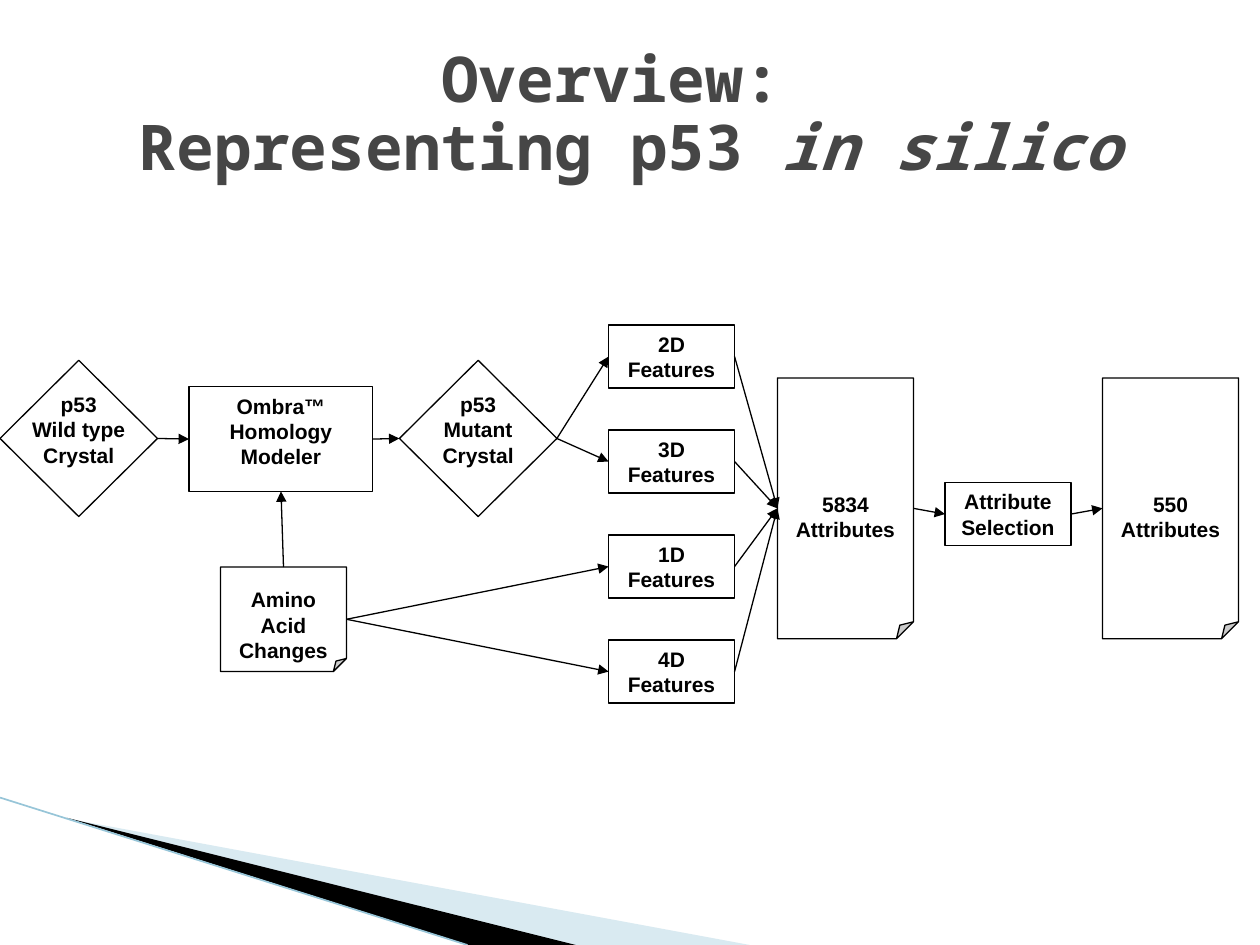
"""Build the slide on representing p53 in silico as a flow diagram."""
from lxml.etree import SubElement
from pptx import Presentation
from pptx.dml.color import RGBColor
from pptx.enum.shapes import MSO_CONNECTOR, MSO_SHAPE
from pptx.enum.text import MSO_ANCHOR, PP_ALIGN
from pptx.oxml.ns import qn
from pptx.util import Inches, Pt

BLACK = RGBColor(0x00, 0x00, 0x00)
WHITE = RGBColor(0xFF, 0xFF, 0xFF)
TITLE_GRAY = RGBColor(0x46, 0x46, 0x46)
PALE_BLUE = RGBColor(0xA0, 0xCB, 0xDC)
EDGE_BLUE = RGBColor(0x97, 0xC5, 0xD8)
TOP, LEFT, BOTTOM, RIGHT = range(4)


def add_text(paragraph, text, *, font="Arial", size=12, color=BLACK, italic=None):
    run = paragraph.add_run()
    run.text = text
    run.font.name = font
    run.font.size = Pt(size)
    run.font.bold = True
    run.font.italic = italic
    run.font.color.rgb = color


def add_line(start, end, color, width):
    line = slide.shapes.add_connector(
        MSO_CONNECTOR.STRAIGHT, *[Inches(value) for value in (*start, *end)]
    )
    line.line.color.rgb = color
    line.line.width = Pt(width)
    SubElement(line._element.spPr, qn("a:effectLst"))
    return line


presentation = Presentation()
presentation.slide_width = Inches(10)
presentation.slide_height = Inches(7.5)
slide = presentation.slides.add_slide(presentation.slide_layouts[5])

title = slide.shapes.title
title.left, title.top = Inches(0.5), Inches(0.3)
title.width, title.height = Inches(9), Inches(1.25)
title.text_frame.vertical_anchor = MSO_ANCHOR.MIDDLE
paragraph = title.text_frame.paragraphs[0]
paragraph.alignment = PP_ALIGN.CENTER
paragraph.line_spacing = 0.9
title_format = {"font": "Noto Sans Mono", "size": 36, "color": TITLE_GRAY}
add_text(paragraph, "Overview: ", **title_format)
paragraph.add_line_break()
add_text(paragraph, "Representing p53 ", **title_format)
add_text(paragraph, "in silico", italic=True, **title_format)

wedges = [
    (PALE_BLUE, 40, [(0.55, 6.5), (5.95, 7.5), (4.56, 7.5)]),
    (BLACK, 100, [(0.53, 6.49), (4.57, 7.5), (3.72, 7.5)]),
]
for color, opacity, corners in wedges:
    points = [(Inches(x), Inches(y)) for x, y in corners]
    builder = slide.shapes.build_freeform(*points[0])
    builder.add_line_segments(points[1:], close=True)
    wedge = builder.convert_to_shape()
    wedge.shadow.inherit = False
    wedge.fill.solid()
    wedge.fill.fore_color.rgb = color
    wedge.line.fill.background()
    if opacity < 100:
        color_element = wedge._element.spPr.find(".//" + qn("a:srgbClr"))
        SubElement(color_element, qn("a:alpha"), val=str(opacity * 1000))
add_line((0, 6.33), (3.71, 7.5), EDGE_BLUE, 0.95)

DIAMOND, BOX, PAGE = MSO_SHAPE.DIAMOND, MSO_SHAPE.RECTANGLE, MSO_SHAPE.FOLDED_CORNER
steps = {
    "wild type": (DIAMOND, "p53\vWild type\vCrystal", 0, 2.86, 1.25, 1.24, 0, 0.14),
    "mutant": (DIAMOND, "p53\vMutant\vCrystal", 3.17, 2.86, 1.25, 1.24, 0, 0.14),
    "modeler": (BOX, "Ombra™ Homology Modeler", 1.5, 3.07, 1.46, 0.83, 0, 0.13),
    "changes": (PAGE, "Amino Acid Changes", 1.75, 4.5, 1, 0.83, 0.19, 0),
    "all": (PAGE, "5834\vAttributes", 6.17, 3, 1.08, 2.07, 0.26, 0),
    "selection": (BOX, "Attribute Selection", 7.5, 3.83, 1, 0.5, 0.05, 0.05),
    "selected": (PAGE, "550\vAttributes", 8.75, 3, 1.08, 2.07, 0.26, 0),
}
features = ["2D", "3D", "1D", "4D"]
for row, name in enumerate(features):
    top = 2.58 + row * 2.5 / 3
    steps[name] = (BOX, f"{name} Features", 4.83, top, 1, 0.5, 0.05, 0.05)

shapes = {}
for name, (kind, text, left, top, width, height, above, below) in steps.items():
    shape = slide.shapes.add_shape(
        kind, Inches(left), Inches(top), Inches(width), Inches(height)
    )
    shape.shadow.inherit = False
    shape.fill.solid()
    shape.fill.fore_color.rgb = WHITE
    shape.line.color.rgb = BLACK
    shape.line.width = Pt(0.75)
    if kind == PAGE:
        adjustments = shape._element.spPr.find(".//" + qn("a:avLst"))
        SubElement(adjustments, qn("a:gd"), name="adj", fmla="val 12500")
    frame = shape.text_frame
    frame.word_wrap = kind != DIAMOND
    frame.vertical_anchor = MSO_ANCHOR.MIDDLE
    frame.margin_top, frame.margin_bottom = Inches(above), Inches(below)
    paragraph = frame.paragraphs[0]
    paragraph.alignment = PP_ALIGN.CENTER
    for index, line_text in enumerate(text.split("\v")):
        if index:
            paragraph.add_line_break()
        add_text(paragraph, line_text)
    shapes[name] = shape

arrows = [
    ("wild type", RIGHT, "modeler", LEFT),
    ("changes", TOP, "modeler", BOTTOM),
    ("modeler", RIGHT, "mutant", LEFT),
    ("mutant", RIGHT, "2D", LEFT),
    ("mutant", RIGHT, "3D", LEFT),
    ("changes", RIGHT, "1D", LEFT),
    ("changes", RIGHT, "4D", LEFT),
    ("all", RIGHT, "selection", LEFT),
    ("selection", RIGHT, "selected", LEFT),
]
arrows += [(name, RIGHT, "all", LEFT) for name in features]
for source, source_side, target, target_side in arrows:
    arrow = add_line((0, 0), (1, 1), BLACK, 0.75)
    arrow.begin_connect(shapes[source], source_side)
    arrow.end_connect(shapes[target], target_side)
    SubElement(arrow.line._get_or_add_ln(), qn("a:tailEnd"), type="triangle")

presentation.save("out.pptx")
